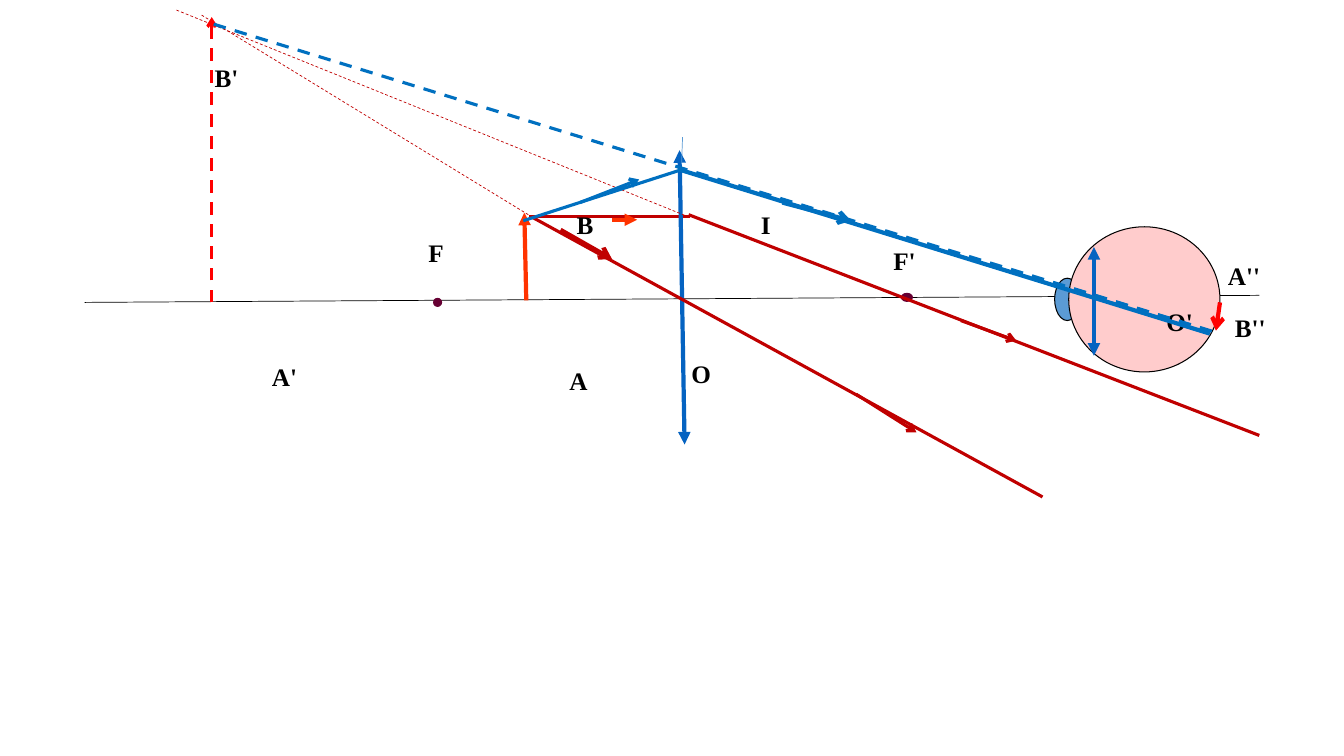
from lxml import etree
from pptx import Presentation
from pptx.dml.color import RGBColor
from pptx.enum.dml import MSO_LINE_DASH_STYLE
from pptx.enum.shapes import MSO_CONNECTOR, MSO_SHAPE
from pptx.enum.text import MSO_AUTO_SIZE
from pptx.oxml.ns import qn
from pptx.util import Inches, Pt

STRAIGHT = MSO_CONNECTOR.STRAIGHT
OVAL = MSO_SHAPE.OVAL
DASH = MSO_LINE_DASH_STYLE.DASH
GROW = MSO_AUTO_SIZE.SHAPE_TO_FIT_TEXT

BLACK = RGBColor(0x00, 0x00, 0x00)
RED = RGBColor(0xFF, 0x00, 0x00)
ORANGE = RGBColor(0xFF, 0x33, 0x00)
DARK_RED = RGBColor(0xC0, 0x00, 0x00)
PLUM = RGBColor(0x66, 0x00, 0x33)
PINK = RGBColor(0xFF, 0xCC, 0xCC)
LENS_BLUE = RGBColor(0x05, 0x63, 0xC1)
RAY_BLUE = RGBColor(0x00, 0x70, 0xC0)
PALE_BLUE = RGBColor(0x5B, 0x9B, 0xD5)


def add_run(paragraph, text, font="Times New Roman", size=18, bold=True, color=BLACK):
    run = paragraph.add_run()
    run.text = text
    run.font.name = font
    run.font.size = Pt(size)
    run.font.bold = bold
    run.font.color.rgb = color


class Diagram:
    """Draws the parts of an optical diagram on one slide."""

    def __init__(self, slide):
        self.shapes = slide.shapes

    def line(self, start, end, color, width=2.25, dash=None, head=None, tail=None):
        points = [Inches(value) for value in (*start, *end)]
        connector = self.shapes.add_connector(STRAIGHT, *points)
        connector.line.color.rgb = color
        connector.line.width = Pt(width)
        if dash:
            connector.line.dash_style = dash
        outline = connector.line._get_or_add_ln()
        for tag, kind in (("a:headEnd", head), ("a:tailEnd", tail)):
            if kind:
                etree.SubElement(outline, qn(tag), type=kind)
        etree.SubElement(connector._element.spPr, qn("a:effectLst"))

    def ellipse(self, left, top, width, height, fill, outline=BLACK):
        box = [Inches(value) for value in (left, top, width, height)]
        shape = self.shapes.add_shape(OVAL, *box)
        shape.shadow.inherit = False
        shape.fill.solid()
        shape.fill.fore_color.rgb = fill
        shape.line.color.rgb = outline
        shape.line.width = Pt(0.75)

    def label(self, text, left, top, width, height=0.4, indented=False):
        box = [Inches(value) for value in (left, top, width, height)]
        frame = self.shapes.add_textbox(*box).text_frame
        frame.word_wrap = True
        frame.auto_size = GROW
        paragraph = frame.paragraphs[0]
        if indented:
            add_run(paragraph, " ", font="Arial")
        add_run(paragraph, text)


def main():
    presentation = Presentation()
    presentation.slide_width = Inches(13.33)
    presentation.slide_height = Inches(7.5)
    diagram = Diagram(presentation.slides.add_slide(presentation.slide_layouts[6]))

    # Ray parallel to the axis, and the optical axis
    diagram.line((5.25, 2.15), (6.84, 2.15), DARK_RED)
    diagram.line((6.07, 2.18), (6.32, 2.18), ORANGE, 3, tail="triangle")
    diagram.line((0.84, 3), (12.49, 2.93), BLACK, 0.5)

    # Object, foci and magnifying lens
    diagram.line((5.22, 2.98), (5.2, 2.11), ORANGE, 3, tail="triangle")
    diagram.ellipse(8.94, 2.91, 0.11, 0.08, PLUM, PLUM)
    diagram.line((6.74, 1.49), (6.79, 4.41), LENS_BLUE, 3, head="triangle", tail="triangle")
    diagram.ellipse(4.3, 2.96, 0.08, 0.08, PLUM, PLUM)

    # Eye: cornea, eyeball and its lens
    diagram.ellipse(10.46, 2.76, 0.25, 0.42, PALE_BLUE)
    diagram.ellipse(10.6, 2.25, 1.5, 1.44, PINK)
    diagram.line((10.85, 2.45), (10.85, 3.53), LENS_BLUE, 3, head="triangle", tail="triangle")

    # Point labels
    diagram.label("F", 4.15, 2.31, 0.46)
    diagram.label("B", 5.62, 2.03, 0.62)
    diagram.label(" A", 5.5, 3.58, 0.62)
    diagram.label("O", 6.76, 3.51, 0.51)
    diagram.label("O'", 11.47, 2.99, 0.62)
    diagram.label(" F'", 8.7, 2.38, 0.67)
    diagram.label("I", 7.38, 2.03, 0.44, indented=True)
    diagram.label("A'", 2.53, 3.54, 0.87, indented=True)
    diagram.label("B'", 1.96, 0.57, 0.68, indented=True)
    diagram.label("A''", 12.08, 2.23, 0.53, 0.71, indented=True)
    diagram.label("B''", 12.08, 3.05, 0.81, indented=True)

    # Red rays through the lens, with direction arrows
    diagram.line((6.77, 1.36), (6.76, 1.63), PALE_BLUE, 0.5)
    diagram.line((6.83, 2.13), (12.49, 4.32), DARK_RED)
    diagram.line((9.53, 3.18), (10.08, 3.38), DARK_RED, tail="arrow")
    diagram.line((5.27, 2.15), (10.34, 4.93), DARK_RED)
    diagram.line((5.56, 2.28), (6.07, 2.57), DARK_RED, 3, tail="arrow")
    diagram.line((8.49, 3.91), (9.09, 4.29), DARK_RED, tail="arrow")

    # Backward extensions and the virtual image
    diagram.line((1.75, 0.1), (6.85, 2.16), DARK_RED, 0.5, DASH)
    diagram.line((5.24, 2.13), (2, 0.15), DARK_RED, 0.5, DASH)
    diagram.line((2.1, 3), (2.1, 0.17), RED, dash=DASH, tail="arrow")

    # Blue ray from the object to the retina
    diagram.line((5.19, 2.19), (6.74, 1.69), RAY_BLUE)
    diagram.line((5.75, 2.01), (6.34, 1.78), RAY_BLUE, tail="arrow")
    diagram.line((2.12, 0.24), (12.1, 3.31), RAY_BLUE, dash=DASH)
    diagram.line((6.73, 1.68), (12, 3.31), RAY_BLUE, 3)
    diagram.line((7.76, 2.01), (8.44, 2.19), RAY_BLUE, 3, tail="arrow")

    # Image on the retina
    diagram.line((12.1, 3), (12.06, 3.28), RED, 3, tail="arrow")

    presentation.save("out.pptx")


if __name__ == "__main__":
    main()
